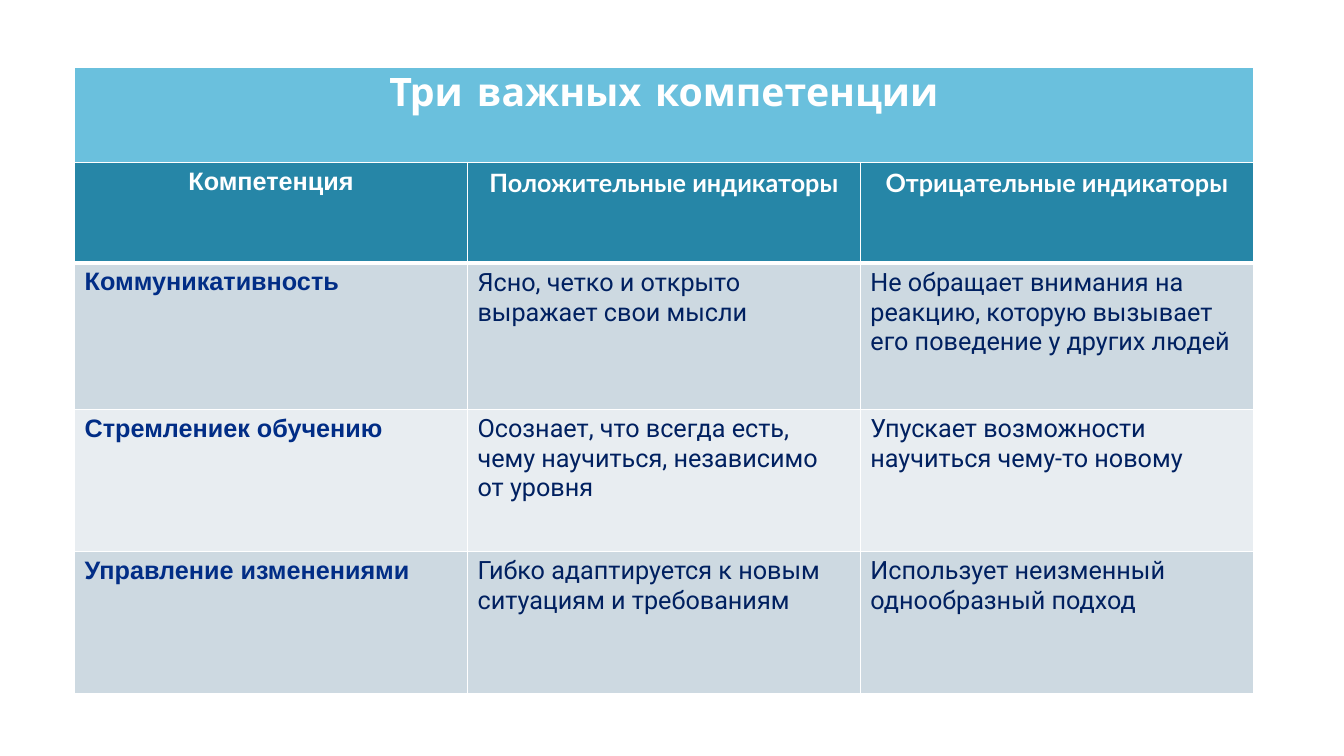
import pptx
import pptx.util
import pptx.dml.color
import pptx.enum.text
import pptx.oxml
import pptx.oxml.ns
from dataclasses import dataclass

Inches = pptx.util.Inches
Pt = pptx.util.Pt
ALIGN = pptx.enum.text.PP_ALIGN
ANCHOR = pptx.enum.text.MSO_ANCHOR


@dataclass(frozen=True)
class Theme:
    white: str = "FFFFFF"
    banner: str = "6AC0DD"
    header: str = "2686A7"
    bands: tuple = ("CDD9E1", "E8EDF1")
    body: str = "002060"
    names: tuple = ("012D86", "0E2557")
    title_size: int = 28
    cell_size: int = 18
    title_font: str = "Comic Neue"
    name_font: str = "Arial"
    head_font: str = "Lato"
    body_font: str = "Roboto"


THEME = Theme()
LEFT, WIDTH = 0.74, 11.69
HEIGHTS = (1, 1.45, 1.41, 1.41)
HEADS = ("Компетенция", "Положительные индикаторы", "Отрицательные индикаторы")
SKILLS = (
    ("Коммуникативность",
     "Ясно, четко и открыто выражает свои мысли",
     "Не обращает внимания на реакцию, которую вызывает его поведение у других людей"),
    ("Стремлениек обучению",
     "Осознает, что всегда есть, чему научиться, независимо от уровня",
     "Упускает возможности научиться чему-то новому"),
    ("Управление изменениями",
     "Гибко адаптируется к новым ситуациям и требованиям",
     "Использует неизменный однообразный подход"),
)


def rgb(code):
    return pptx.dml.color.RGBColor.from_string(code)


def paint(fill, color):
    """Fill with one colour, or with a gradient for a pair of colours."""
    if isinstance(color, str):
        fill.solid()
        fill.fore_color.rgb = rgb(color)
        return
    fill.gradient()
    fill.gradient_angle = 0
    for stop, code in zip(fill.gradient_stops, color):
        stop.color.rgb = rgb(code)


def write(frame, text, font, size, color, bold, align):
    para = frame.paragraphs[0]
    para.alignment = align
    run = para.add_run()
    run.text = text
    run.font.name = font
    run.font.size = Pt(size)
    run.font.bold = bold
    paint(run.font.fill, color)
    return para


def add_title(slide, text):
    title = slide.shapes.title
    title.left, title.top = Inches(LEFT), Inches(0.67)
    title.width, title.height = Inches(WIDTH), Inches(1.44)
    paint(title.fill, THEME.banner)
    paint(title.line.fill, THEME.white)
    title.line.width = Pt(0.75)
    frame = title.text_frame
    frame.vertical_anchor = ANCHOR.TOP
    para = write(frame, text, THEME.title_font, THEME.title_size,
                 THEME.white, True, ALIGN.CENTER)
    para.line_spacing = 0.9


def set_edges(cell, top, bottom):
    """Draw white cell borders; top and bottom are widths in points."""
    props = cell._tc.get_or_add_tcPr()
    for spot, (side, width) in enumerate(zip("LRTB", (1, 1, top, bottom))):
        edge = pptx.oxml.parse_xml(
            f'<a:ln{side} {pptx.oxml.ns.nsdecls("a")} w="{Pt(width)}">'
            f'<a:solidFill><a:srgbClr val="{THEME.white}"/></a:solidFill>'
            f'</a:ln{side}>')
        props.insert(spot, edge)


def style(row, col):
    """Give font, colour, weight and alignment by place in the table."""
    if row == 0:
        font = THEME.head_font if col else THEME.name_font
        return font, THEME.white, True, ALIGN.CENTER
    if col == 0:
        return THEME.name_font, THEME.names, True, ALIGN.LEFT
    return THEME.body_font, THEME.body, False, ALIGN.LEFT


def add_grid(slide, rows):
    table = slide.shapes.add_table(
        len(rows), len(HEADS), Inches(LEFT), Inches(1.61),
        Inches(WIDTH), Inches(sum(HEIGHTS))).table
    for row, texts in enumerate(rows):
        table.rows[row].height = Inches(HEIGHTS[row])
        for col, text in enumerate(texts):
            cell = table.cell(row, col)
            paint(cell.fill, THEME.bands[(row - 1) % 2] if row else THEME.header)
            set_edges(cell, 3 if row == 1 else 1, 3 if row == 0 else 1)
            font, color, bold, align = style(row, col)
            write(cell.text_frame, text, font, THEME.cell_size, color, bold, align)


def main():
    deck = pptx.Presentation()
    deck.slide_width, deck.slide_height = Inches(13.33), Inches(7.5)
    slide = deck.slides.add_slide(deck.slide_layouts[5])
    add_title(slide, "Три важных компетенции")
    add_grid(slide, (HEADS, *SKILLS))
    deck.save("out.pptx")


if __name__ == "__main__":
    main()
